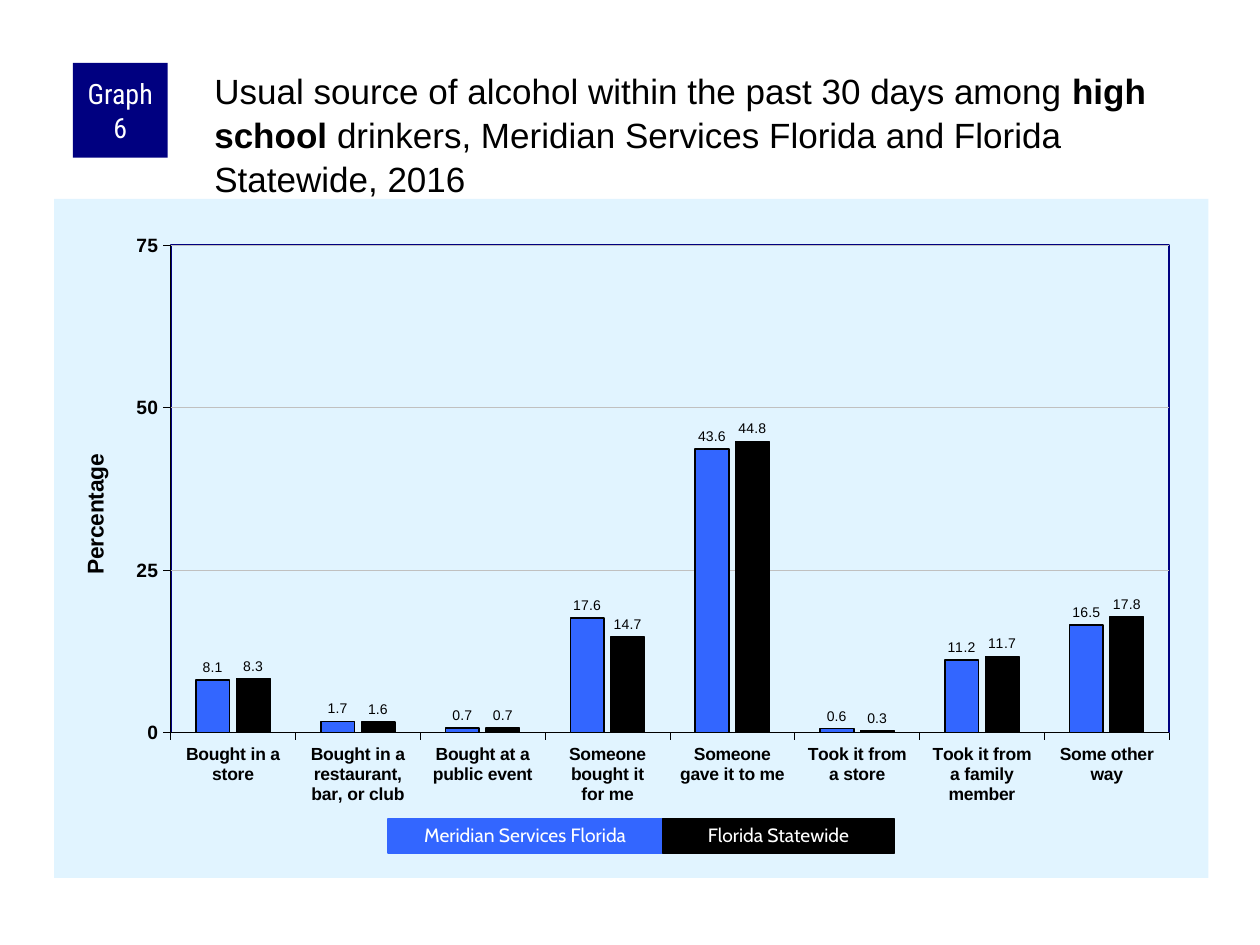
"""Build the slide on usual alcohol sources among high school drinkers."""
from dataclasses import dataclass

from lxml import etree
from pptx import Presentation
from pptx.chart.data import CategoryChartData
from pptx.dml.color import RGBColor
from pptx.enum.chart import XL_CHART_TYPE as CT, XL_LABEL_POSITION as LP, XL_TICK_MARK as TM
from pptx.enum.shapes import MSO_SHAPE as SHAPE
from pptx.enum.text import MSO_ANCHOR as ANCHOR, MSO_AUTO_SIZE as FIT, PP_ALIGN as AL
from pptx.oxml.ns import qn
from pptx.util import Cm, Pt


@dataclass(frozen=True)
class Theme:
    navy: str = "000080"
    blue: str = "3366FF"
    black: str = "000000"
    white: str = "FFFFFF"
    panel: str = "E1F4FF"
    grid: str = "C0C0C0"
    body: str = "Arial"
    badge: str = "Roboto Condensed"
    key: str = "Cabin"
    title_pt: float = 20
    badge_pt: float = 16
    axis_title_pt: float = 13
    chart_pt: float = 11.5
    key_pt: float = 11
    value_pt: float = 11
    category_pt: float = 10
    label_pt: float = 8


T = Theme()
CATEGORIES = [
    "Bought in a store", "Bought in a restaurant, bar, or club",
    "Bought at a public event", "Someone bought it\nfor me",
    "Someone\ngave it to me", "Took it from\na store",
    "Took it from\na family member", "Some other way",
]
REGION, STATE = "Meridian Services Florida", "Florida Statewide"
SERIES = [
    (REGION, T.blue, 1, [8.1, 1.7, 0.7, 17.6, 43.6, 0.6, 11.2, 16.5]),
    (STATE, T.black, 0.75, [8.3, 1.6, 0.7, 14.7, 44.8, 0.3, 11.7, 17.8]),
]


def rgb(color):
    return RGBColor.from_string(color)


def set_font(font, size, color=T.black, name=T.body, bold=False):
    font.size, font.name, font.bold = Pt(size), name, bold
    font.color.rgb = rgb(color)


def set_line(line, color, width):
    line.color.rgb, line.width = rgb(color), Pt(width)


def write(tf, *texts, align=AL.LEFT, spacing=1.0, bold=(), **font):
    """Fill the first paragraph with runs; bold holds the bold run indexes."""
    p = tf.paragraphs[0]
    p.alignment, p.line_spacing = align, spacing
    for i, text in enumerate(texts):
        r = p.add_run()
        r.text = text
        set_font(r.font, bold=i in bold, **font)


def set_frame(tf, margins, anchor):
    tf.word_wrap, tf.auto_size, tf.vertical_anchor = True, FIT.NONE, anchor
    tf.margin_left, tf.margin_top, tf.margin_right, tf.margin_bottom = map(Cm, margins)


def add_box(slide, at, text, fill, margins, line=None, **fmt):
    s = slide.shapes.add_shape(SHAPE.RECTANGLE, *map(Cm, at))
    s.shadow.inherit = False
    s.fill.solid()
    s.fill.fore_color.rgb = rgb(fill)
    if line:
        set_line(s.line, fill, line)
    else:
        s.line.fill.background()
    set_frame(s.text_frame, margins, ANCHOR.MIDDLE)
    write(s.text_frame, text, align=AL.CENTER, color=T.white, **fmt)


def set_title(slide):
    s = slide.shapes.title
    s.left, s.top, s.width, s.height = map(Cm, (4.24, 1.27, 20.12, 2.11))
    set_frame(s.text_frame, (0.08, 0.08, 0, 0), ANCHOR.TOP)
    write(s.text_frame, "Usual source of alcohol within the past 30 days among ", "high school",
          f" drinkers, {REGION} and {STATE}, 2016", bold=(1,), spacing=1.05, size=T.title_pt)


def set_layout(parent, index, **values):
    """Place a chart part by fractions of the chart area."""
    for old in parent.findall(qn("c:layout")):
        parent.remove(old)
    layout = etree.Element(qn("c:layout"))
    manual = etree.SubElement(layout, qn("c:manualLayout"))
    for tag, value in values.items():
        etree.SubElement(manual, qn(f"c:{tag}"), val=str(value))
    parent.insert(index, layout)


def area_format(fill=None, line=None):
    """Return chart area properties with an optional fill and outline."""
    sp = etree.Element(qn("c:spPr"))
    for parent, color in ((sp, fill), (etree.Element(qn("a:ln"), w=str(Pt(1))), line)):
        if parent is not sp:
            sp.append(parent)
        if color:
            solid = etree.SubElement(parent, qn("a:solidFill"))
            etree.SubElement(solid, qn("a:srgbClr"), val=color)
        else:
            etree.SubElement(parent, qn("a:noFill"))
    return sp


def format_axis(axis, size):
    axis.major_tick_mark, axis.minor_tick_mark = TM.OUTSIDE, TM.NONE
    set_font(axis.tick_labels.font, size, bold=True)
    set_line(axis.format.line, T.black, 0.25)


def format_value_axis(axis):
    axis.minimum_scale, axis.maximum_scale, axis.major_unit = 0, 75, 25
    axis.tick_labels.number_format = "0"
    axis.tick_labels.number_format_is_linked = False
    set_line(axis.major_gridlines.format.line, T.grid, 0.25)
    write(axis.axis_title.text_frame, "Percentage", bold=(0,), align=AL.CENTER,
          size=T.axis_title_pt)
    set_layout(axis.axis_title.element, 1, xMode="edge", yMode="edge", x=0.02, y=0.37)


def format_series(series, color, width):
    series.format.fill.solid()
    series.format.fill.fore_color.rgb = rgb(color)
    set_line(series.format.line, T.black, width)
    labels = series.data_labels
    labels.show_value, labels.position = True, LP.OUTSIDE_END
    labels.number_format, labels.number_format_is_linked = "0.0", False
    set_font(labels.font, T.label_pt)


def add_source_chart(slide):
    data = CategoryChartData(number_format="0.0")
    data.categories = CATEGORIES
    for name, _, _, values in SERIES:
        data.add_series(name, values)
    at = map(Cm, (1.09, 4.01, 23.27, 13.69))
    chart = slide.shapes.add_chart(CT.COLUMN_CLUSTERED, *at, data).chart
    chart.has_title = chart.has_legend = False
    set_font(chart.font, T.chart_pt)
    plot = chart.plots[0]
    plot.gap_width, plot.overlap, plot.vary_by_categories = 150, -20, False
    for series, (_, color, width, _) in zip(plot.series, SERIES):
        format_series(series, color, width)
    format_axis(chart.category_axis, T.category_pt)
    format_axis(chart.value_axis, T.value_pt)
    format_value_axis(chart.value_axis)
    body = chart.element.find(qn("c:chart"))
    area = body.find(qn("c:plotArea"))
    set_layout(area, 0, layoutTarget="inner", xMode="edge", yMode="edge",
               x=0.101, y=0.068, w=0.865, h=0.718)
    area.append(area_format(line=T.navy))
    body.addnext(area_format(fill=T.panel))


def add_key(slide):
    left = 7.82
    for (name, color, _, _), width in zip(SERIES, (5.54, 4.67)):
        add_box(slide, (left, 16.51, width, 0.69), name, color, (0.25, 0.13, 0.25, 0.13),
                line=0.75, spacing=0.9, size=T.key_pt, name=T.key)
        left += width


def main():
    prs = Presentation()
    prs.slide_width, prs.slide_height = Cm(25.4), Cm(19.05)
    slide = prs.slides.add_slide(prs.slide_layouts[5])
    set_title(slide)
    add_source_chart(slide)
    add_box(slide, (1.47, 1.27, 1.91, 1.91), "Graph 6", T.navy, (0.13, 0, 0.13, 0),
            size=T.badge_pt, name=T.badge)
    add_key(slide)
    prs.save("out.pptx")


if __name__ == "__main__":
    main()
